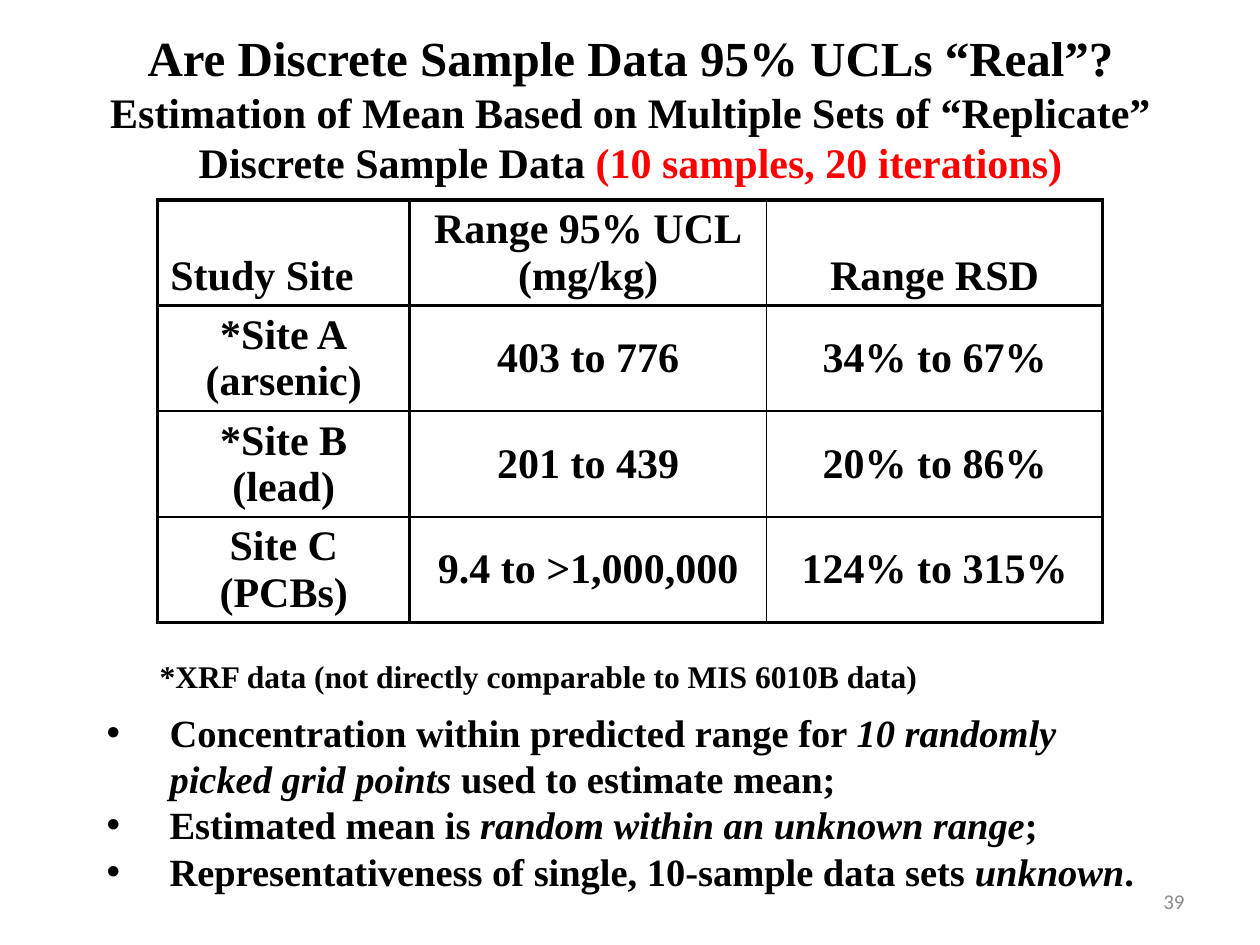
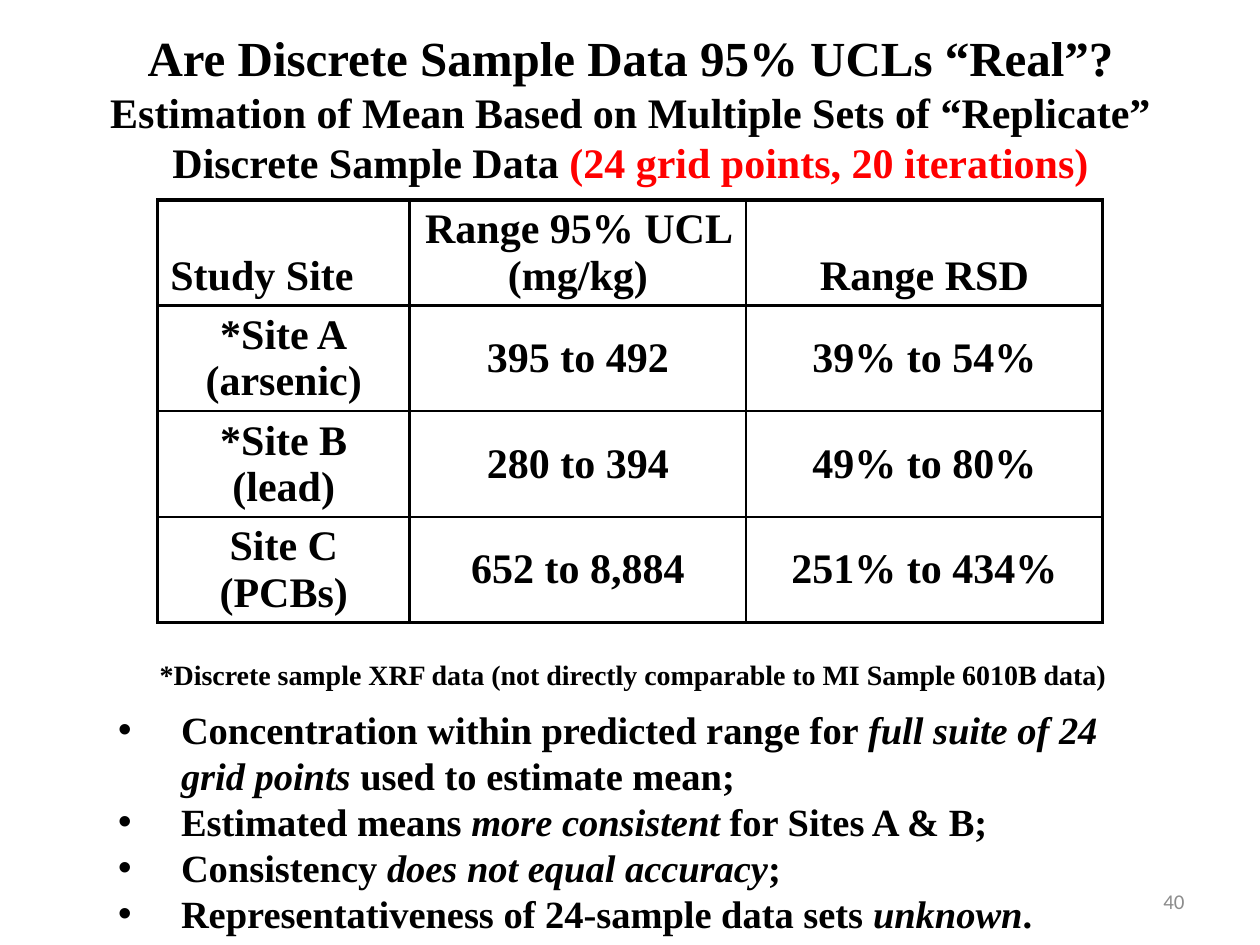
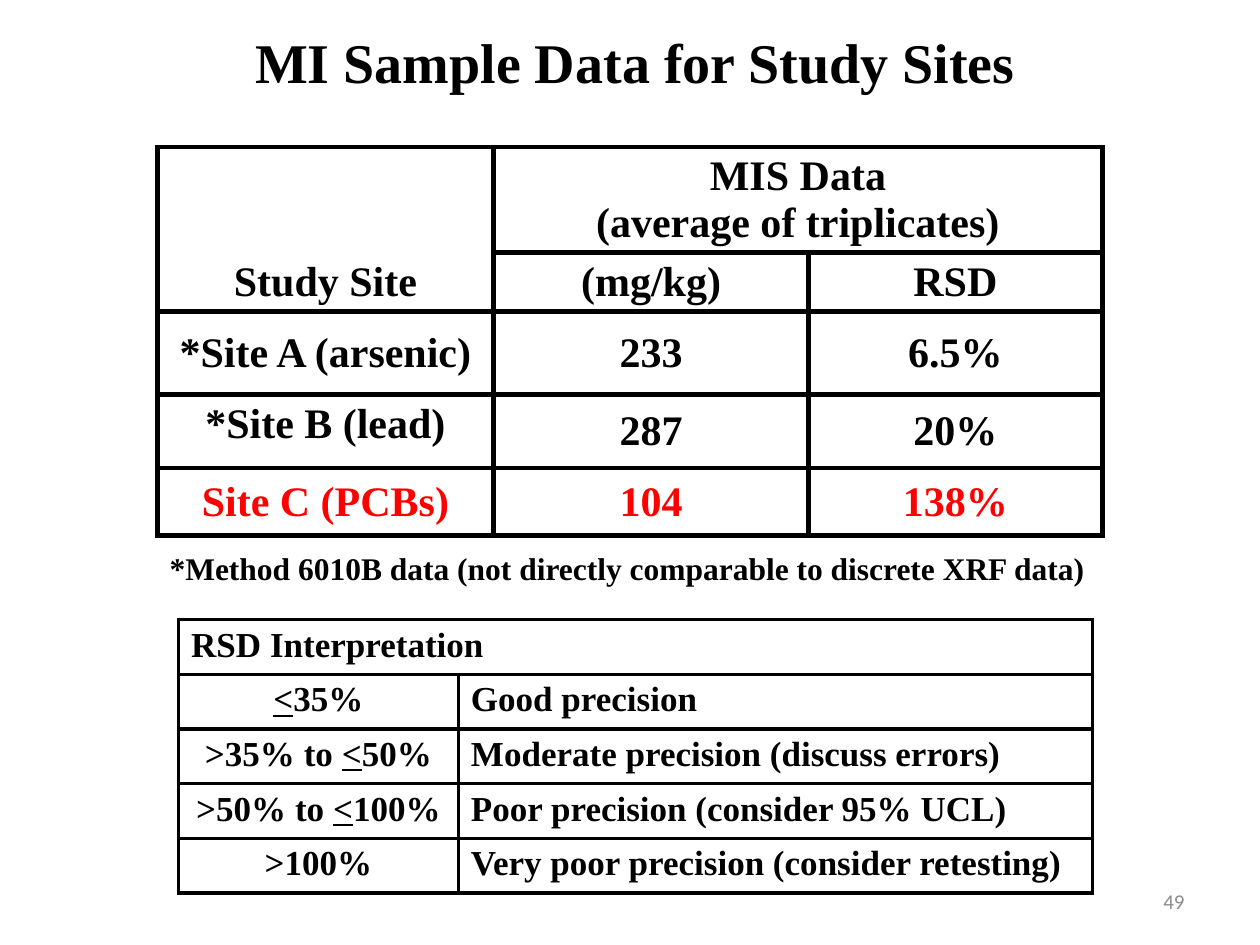
from lxml import etree
from pptx import Presentation
from pptx.dml.color import RGBColor
from pptx.enum import text as t
from pptx.oxml import ns
from pptx.util import Cm, Pt

HUES = {"ink": "000000", "alert": "FF0000", "page": "8C8C8C"}
SERIF, SANS = "Times New Roman", "Calibri"
LEFT, MID, RIGHT = t.PP_ALIGN.LEFT, t.PP_ALIGN.CENTER, t.PP_ALIGN.RIGHT
TOP, CENTRE, BASE = t.MSO_ANCHOR.TOP, t.MSO_ANCHOR.MIDDLE, t.MSO_ANCHOR.BOTTOM


def hue(name):
    return RGBColor.from_string(HUES[name])


def place(shape, box):
    shape.left, shape.top, shape.width, shape.height = map(Cm, box)


def write(para, words, size, align=LEFT, mark=None, color="ink", face=SERIF, bold=True):
    """Fill a paragraph; parts between underscores take the style in mark."""
    para.alignment = align
    for i, part in enumerate(words.split("_")):
        if not part:
            continue
        run = para.add_run()
        run.text = part
        font = run.font
        font.name, font.size, font.bold = face, Pt(size), bold
        font.color.rgb = hue(color)
        if i % 2 and mark == "red":
            font.color.rgb = hue("alert")
        elif i % 2:
            setattr(font, mark, True)


def lines(frame, words):
    """Yield each line of words with the paragraph that will hold it."""
    for i, line in enumerate(words.split("\n")):
        yield (frame.add_paragraph() if i else frame.paragraphs[0]), line


def head(slide, box, words, sizes):
    shape = slide.shapes.title
    place(shape, box)
    frame = shape.text_frame
    frame.word_wrap, frame.auto_size = True, t.MSO_AUTO_SIZE.NONE
    frame.vertical_anchor = TOP
    for (para, line), size in zip(lines(frame, words), sizes):
        write(para, line, size, MID, "red")


def text_box(slide, box):
    frame = slide.shapes.add_textbox(*map(Cm, box)).text_frame
    frame.word_wrap = True
    return frame


def note(slide, box, words, size):
    write(text_box(slide, box).paragraphs[0], words, size)


def points(slide, box, words):
    for para, line in lines(text_box(slide, box), words):
        props = para._p.get_or_add_pPr()
        props.set("marL", str(Cm(1.27)))
        props.set("indent", str(-Cm(1.27)))
        etree.SubElement(props, ns.qn("a:buFont")).set("typeface", "Arial")
        etree.SubElement(props, ns.qn("a:buChar")).set("char", "•")
        write(para, line, 22, mark="italic")


def page(slide, number):
    frame = text_box(slide, (18.2, 17.66, 5.93, 1.01))
    frame.vertical_anchor = CENTRE
    write(frame.paragraphs[0], number, 12, RIGHT, color="page", face=SANS, bold=False)


def rule(cell, widths):
    """Draw the cell's left, right, top and bottom borders, in points."""
    props = cell._tc.get_or_add_tcPr()
    for i, (side, width) in enumerate(zip("LRTB", widths)):
        line = etree.Element(ns.qn("a:ln" + side), w=str(Pt(width)))
        fill = etree.SubElement(line, ns.qn("a:solidFill"))
        etree.SubElement(fill, ns.qn("a:srgbClr")).set("val", HUES["ink"])
        props.insert(i, line)


def grid(slide, box, cols, rows, data, size, style, line, thin=((), ())):
    """Build a table; style(row, col) gives align, anchor and colour.

    thin holds the numbers of the column and row edges drawn at 1 pt.
    """
    shape = slide.shapes.add_table(len(rows), len(cols), *map(Cm, box))
    table = shape.table
    table.first_row = table.horz_banding = False
    for col, width in zip(table.columns, cols):
        col.width = Cm(width)
    for row, height in zip(table.rows, rows):
        row.height = Cm(height)
    for r, row in enumerate(data):
        for c, words in enumerate(row):
            cell = table.cell(r, c)
            cell.fill.background()
            rule(cell, [1 if edge in thin[axis] else line
                        for axis, edge in ((0, c), (0, c + 1), (1, r), (1, r + 1))])
            align, cell.vertical_anchor, color = style(r, c)
            for para, part in lines(cell.text_frame, words):
                write(para, part, size, align, "underline", color)
    return table


def range_style(r, c):
    return (MID if r or c else LEFT), (CENTRE if r else BASE), "ink"


def mean_style(r, c):
    anchor = BASE if r < 2 else TOP if (r, c) == (3, 0) else CENTRE
    return MID, anchor, "alert" if r == 4 else "ink"


def key_style(r, c):
    return (MID if r and not c else LEFT), TOP, "ink"


def range_slide(slide, sample, cols, unit, values, remark, bullets):
    head(slide, (1.7, 0.43, 22.02, 3.5),
         "Are Discrete Sample Data 95% UCLs “Real”?\n"
         "Estimation of Mean Based on Multiple Sets of “Replicate” "
         f"Discrete Sample Data _({sample}, 20 iterations)_", (28, 24))
    sites = ("*Site A\n(arsenic)", "*Site B\n(lead)", "Site C\n(PCBs)")
    data = [("Study Site", unit, "Range RSD")]
    data += [(site, *pair) for site, pair in zip(sites, values)]
    grid(slide, (3.18, 4.03, 19.05, 8.52), cols, [2.13] * 4, data, 24,
         range_style, 2.25, ((2,), (2, 3)))
    note(slide, *remark)
    points(slide, *bullets)


def mean_slide(slide):
    head(slide, (0.43, 0.43, 24.76, 1.63), "MI Sample Data for Study Sites", (32,))
    data = [("Study Site", "MIS Data\n(average of triplicates)", ""),
            ("", "(mg/kg)", "RSD"),
            ("*Site A (arsenic)", "233", "6.5%"),
            ("*Site B (lead)", "287", "20%"),
            ("Site C (PCBs)", "104", "138%")]
    table = grid(slide, (3.17, 2.96, 19.05, 7.84), (6.78, 6.35, 5.92),
                 (2.13, 1.19, 1.67, 1.48, 1.37), data, 24, mean_style, 3)
    table.cell(0, 0).merge(table.cell(1, 0))
    table.cell(0, 1).merge(table.cell(0, 2))
    note(slide, (3.17, 10.95, 19.05, 1.02),
         "*Method 6010B data (not directly comparable to discrete XRF data)", 18)
    data = [("RSD Interpretation", ""),
            ("_<_35%", "Good precision"),
            (">35% to _<_50%", "Moderate precision (discuss errors)"),
            (">50% to _<_100%", "Poor precision (consider 95% UCL)"),
            (">100%", "Very poor precision (consider retesting)")]
    table = grid(slide, (3.6, 12.49, 18.42, 5.5), (5.64, 12.78), [1.1] * 5,
                 data, 20, key_style, 2.25)
    table.cell(0, 0).merge(table.cell(0, 1))


def main():
    deck = Presentation()
    deck.slide_width, deck.slide_height = Cm(25.4), Cm(19.05)
    ten, full, mean = (deck.slides.add_slide(deck.slide_layouts[5]) for _ in range(3))
    range_slide(
        ten, "10 samples", (5.08, 7.19, 6.78), "Range 95% UCL\n(mg/kg)",
        [("403 to 776", "34% to 67%"), ("201 to 439", "20% to 86%"),
         ("9.4 to >1,000,000", "124% to 315%")],
        ((2.97, 13.13, 19.05, 1.02),
         "*XRF data (not directly comparable to MIS 6010B data)", 18),
        ((1.9, 14.17, 21.36, 4.01),
         "Concentration within predicted range for _10 randomly picked grid points _"
         "used to estimate mean;\n"
         "Estimated mean is _random within an unknown range_;\n"
         "Representativeness of single, 10-sample data sets _unknown_."))
    range_slide(
        full, "24 grid points", (5.08, 6.78, 7.19), "Range 95% UCL (mg/kg)",
        [("395 to 492", "39% to 54%"), ("280 to 394", "49% to 80%"),
         ("652 to 8,884", "251% to 434%")],
        ((2.97, 13.13, 19.69, 0.94),
         "*Discrete sample XRF data (not directly comparable to MI Sample 6010B data)", 16),
        ((2.13, 14.1, 21.16, 4.95),
         "Concentration within predicted range for _full suite of 24 grid points _"
         "used to estimate mean;\n"
         "Estimated means _more consistent _for Sites A & B;\n"
         "Consistency _does not equal accuracy_;\n"
         "Representativeness of 24-sample data sets _unknown_."))
    mean_slide(mean)
    for slide, number in zip(deck.slides, ("39", "40", "49")):
        page(slide, number)
    deck.save("out.pptx")


if __name__ == "__main__":
    main()
